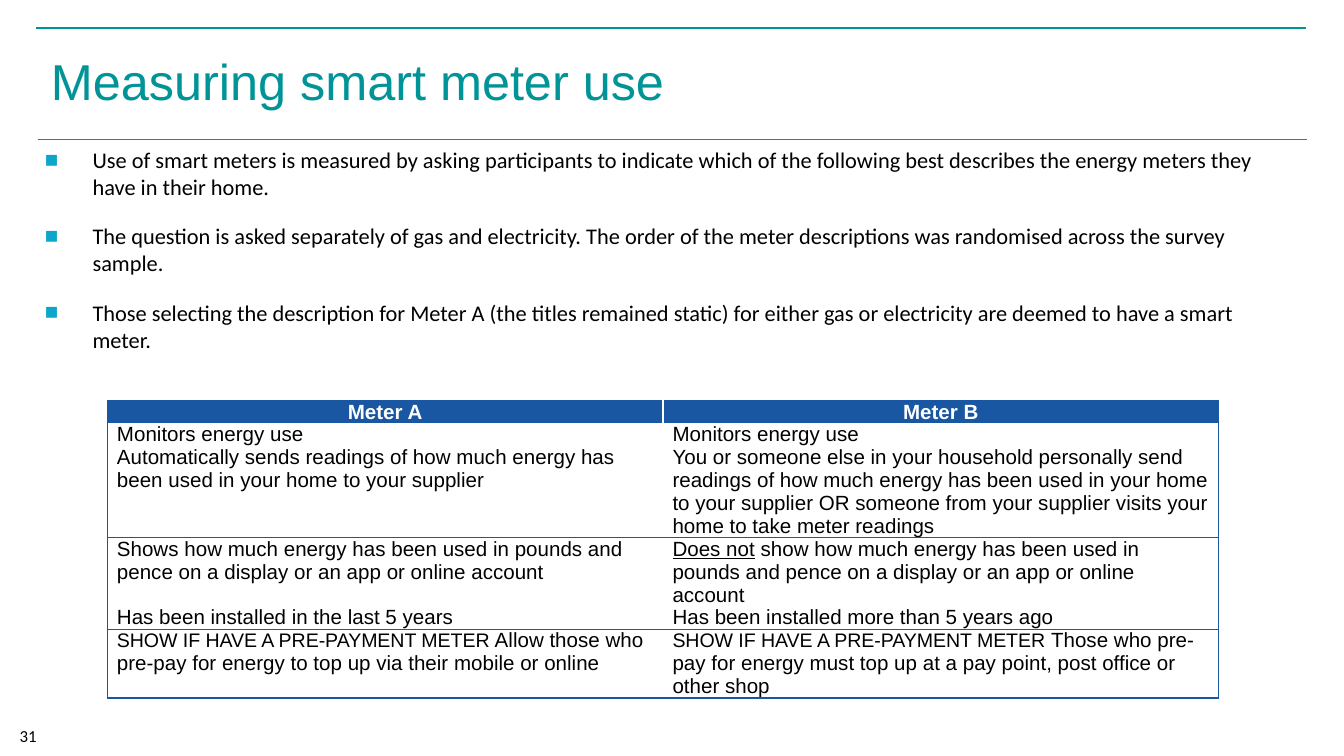
from dataclasses import dataclass

from lxml.etree import SubElement
from pptx import Presentation
from pptx.dml.color import RGBColor
from pptx.enum.shapes import MSO_CONNECTOR
from pptx.enum.text import MSO_ANCHOR, PP_ALIGN
from pptx.oxml.ns import qn
from pptx.util import Cm, Pt


@dataclass(frozen=True)
class Theme:
    teal: str = "009498"
    blue: str = "1957A3"
    cyan: str = "0CA6CA"
    black: str = "000000"
    white: str = "FFFFFF"
    head: str = "Arial"
    body: str = "Calibri"
    title: float = 27
    bullet: float = 12
    cell: float = 11
    prompt: float = 10.5
    number: float = 9
    rule: float = 0.75


T = Theme()
LEFT, TOP, WIDTH, BASE = 0.71, 0.53, 24, 2.64

BULLETS = [
    "Use of smart meters is measured by asking participants to indicate which of the following best describes the energy meters they have in their home.",
    "The question is asked separately of gas and electricity. The order of the meter descriptions was randomised across the survey sample.",
    "Those selecting the description for Meter A (the titles remained static) for either gas or electricity are deemed to have a smart meter.",
]

PROMPT = ("SHOW IF HAVE A PRE-PAYMENT METER", {"size": Pt(T.prompt)})
SHOWS = "how much energy has been used in pounds and pence on a display or an app or online account"
METERS = [
    [["Meter A"], ["Meter B"]],
    [["Monitors energy use"], ["Monitors energy use"]],
    [["Automatically sends readings of how much energy has been used in your home to your supplier"],
     ["You or someone else in your household personally send readings of how much energy has been used in your home to your supplier OR someone from your supplier visits your home to take meter readings"]],
    [["Shows " + SHOWS], [("Does not", {"underline": True}), " show " + SHOWS]],
    [["Has been installed in the last 5 years"], ["Has been installed more than 5 years ago"]],
    [[PROMPT, " Allow those who pre-pay for energy to top up via their mobile or online"],
     [PROMPT, " Those who pre-pay for energy must top up at a pay point, post office or other shop"]],
]
GROUP_STARTS = {3, 5}


def set_attrs(obj, values):
    for name, value in values.items():
        setattr(obj, name, value)


def add_run(p, text, points, font, color, **extra):
    r = p.add_run()
    r.text = text
    set_attrs(r.font, {"size": Pt(points), "name": font, **extra})
    r.font.color.rgb = RGBColor.from_string(color)


def set_frame(tf, anchor):
    set_attrs(tf, {
        "word_wrap": True, "vertical_anchor": anchor,
        "margin_left": Cm(0.25), "margin_right": Cm(0.25),
        "margin_top": Cm(0.13), "margin_bottom": Cm(0.13),
    })


def add_text_box(s, x, y, w, h, anchor):
    tf = s.shapes.add_textbox(Cm(x), Cm(y), Cm(w), Cm(h)).text_frame
    set_frame(tf, anchor)
    return tf


def add_rule(s, x, y):
    line = s.shapes.add_connector(MSO_CONNECTOR.STRAIGHT, Cm(x), Cm(y), Cm(x + WIDTH), Cm(y))
    line.line.color.rgb = RGBColor.from_string(T.teal)
    line.line.width = Pt(T.rule)
    SubElement(line._element.spPr, qn("a:effectLst"))


def set_title(s, text):
    sp = s.shapes.title
    set_attrs(sp, {"left": Cm(LEFT), "top": Cm(TOP), "width": Cm(WIDTH), "height": Cm(BASE - TOP)})
    set_frame(sp.text_frame, MSO_ANCHOR.MIDDLE)
    p = sp.text_frame.paragraphs[0]
    set_attrs(p, {"alignment": PP_ALIGN.LEFT, "line_spacing": 0.9})
    add_run(p, text, T.title, T.head, T.teal)


def add_bullets(s, items):
    tf = add_text_box(s, 0.6, BASE, WIDTH, 4, MSO_ANCHOR.TOP)
    for i, text in enumerate(items):
        p = tf.add_paragraph() if i else tf.paragraphs[0]
        pPr = p._p.get_or_add_pPr()
        pPr.set("marL", str(Cm(0.9)))
        pPr.set("indent", str(-Cm(0.9)))
        color = SubElement(pPr, qn("a:buClr"))
        SubElement(color, qn("a:srgbClr"), val=T.cyan)
        SubElement(pPr, qn("a:buFont"), typeface=T.head)
        SubElement(pPr, qn("a:buChar"), char="■")
        if i:
            p.space_before = Pt(12)
        add_run(p, text, T.bullet, T.body, T.black)


def set_borders(cell, colors):
    tcPr = cell._tc.get_or_add_tcPr()
    for side in ("L", "R", "T", "B"):
        ln = SubElement(tcPr, qn(f"a:ln{side}"), w=str(Pt(T.rule)))
        if side in colors:
            fill = SubElement(ln, qn("a:solidFill"))
            SubElement(fill, qn("a:srgbClr"), val=colors[side])
        else:
            SubElement(ln, qn("a:noFill"))


def border_colors(row, col, last):
    inner, outer = ("R", "L") if col == 0 else ("L", "R")
    if row == 0:
        return {inner: T.white, "B": T.white}
    colors = {outer: T.blue}
    if row in GROUP_STARTS:
        colors["T"] = T.blue
    if row == last or row + 1 in GROUP_STARTS:
        colors["B"] = T.blue
    return colors


def fill_cell(cell, parts, header):
    set_attrs(cell, {"margin_left": Cm(0.18), "margin_right": Cm(0.18), "margin_top": 0, "margin_bottom": 0})
    p = cell.text_frame.paragraphs[0]
    p.alignment = PP_ALIGN.CENTER if header else PP_ALIGN.LEFT
    for part in parts:
        text, extra = (part, {}) if isinstance(part, str) else part
        add_run(p, text, T.cell, T.head, T.white if header else T.black, bold=header, **extra)


def add_meter_table(s, rows):
    height = 0.38
    table = s.shapes.add_table(len(rows), 2, Cm(2.03), Cm(7.57), Cm(21), Cm(height * len(rows))).table
    set_attrs(table, {"first_row": False, "horz_banding": False})
    for i, row in enumerate(rows):
        table.rows[i].height = Cm(height)
        for j, parts in enumerate(row):
            cell = table.cell(i, j)
            fill_cell(cell, parts, i == 0)
            set_borders(cell, border_colors(i, j, len(rows) - 1))
            if i == 0:
                cell.fill.solid()
                cell.fill.fore_color.rgb = RGBColor.from_string(T.blue)
            else:
                cell.fill.background()


def add_page_number(s, text):
    p = add_text_box(s, 0, 13.54, 1.07, 0.75, MSO_ANCHOR.MIDDLE).paragraphs[0]
    p.alignment = PP_ALIGN.CENTER
    add_run(p, text, T.number, T.body, T.black)


def main():
    prs = Presentation()
    set_attrs(prs, {"slide_width": Cm(25.4), "slide_height": Cm(14.29)})
    s = prs.slides.add_slide(prs.slide_layouts[5])
    add_rule(s, LEFT, BASE)
    add_rule(s, LEFT - 0.02, TOP)
    set_title(s, "Measuring smart meter use")
    add_meter_table(s, METERS)
    add_bullets(s, BULLETS)
    add_page_number(s, "31")
    prs.save("out.pptx")


if __name__ == "__main__":
    main()
